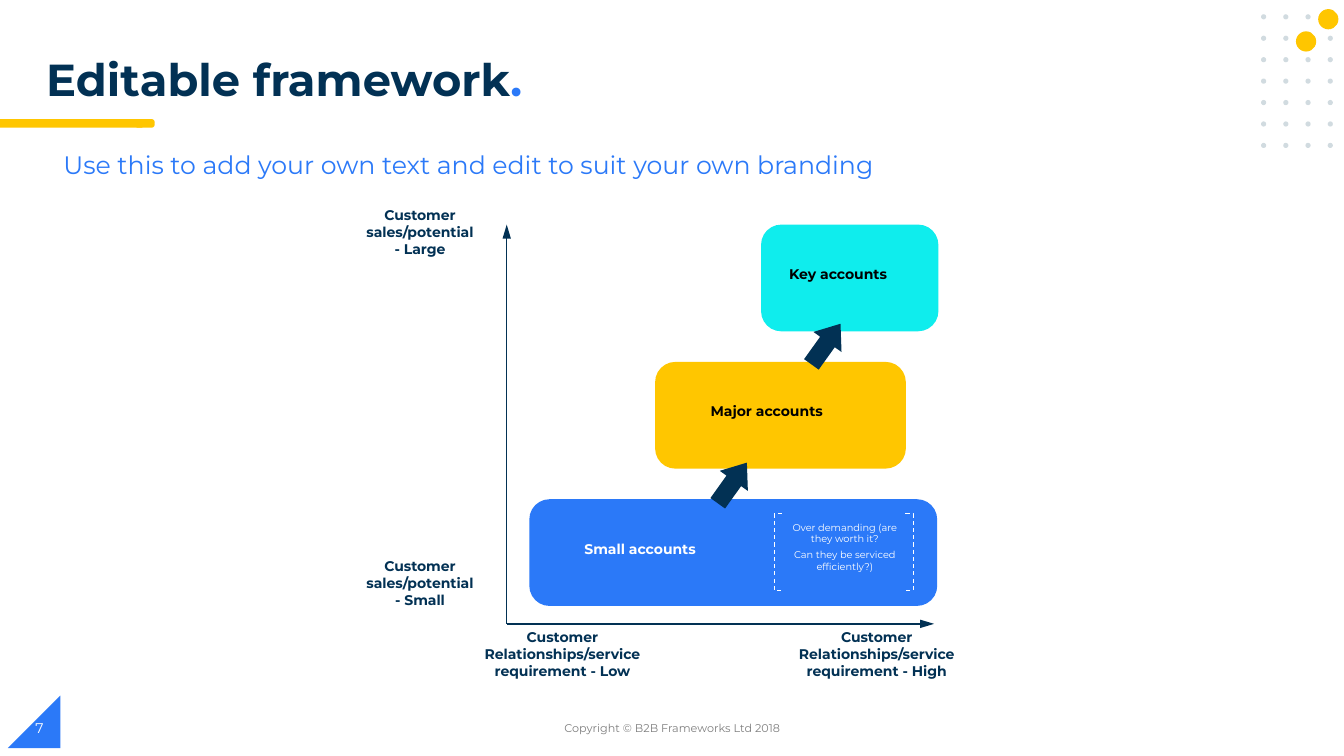
from lxml.etree import SubElement
from pptx import Presentation
from pptx.dml.color import RGBColor
from pptx.enum.dml import MSO_LINE
from pptx.enum.shapes import MSO_CONNECTOR, MSO_SHAPE
from pptx.enum.text import MSO_ANCHOR, MSO_AUTO_SIZE, PP_ALIGN
from pptx.oxml.ns import qn
from pptx.util import Cm, Pt

NAVY = RGBColor(0x02, 0x31, 0x54)
BLUE = RGBColor(0x2B, 0x79, 0xF8)
GOLD = RGBColor(0xFF, 0xC6, 0x00)
CYAN = RGBColor(0x0F, 0xED, 0xED)
PALE = RGBColor(0xD1, 0xDB, 0xE0)
GREY = RGBColor(0x7F, 0x7F, 0x7F)
BLACK = RGBColor(0, 0, 0)
WHITE = RGBColor(0xFF, 0xFF, 0xFF)

TITLE_ONLY = 5
STANDARD_INSETS = (0.25, 0.13)
TIGHT_INSETS = (0, 0.03)


class FrameworkSlide:
    """Draws on one slide in one style; every length is in centimetres."""

    font_name = "Montserrat"

    def __init__(self, deck):
        self.slide = deck.slides.add_slide(deck.slide_layouts[TITLE_ONLY])
        self.shapes = self.slide.shapes

    def add_span(self, para, text, size, color, bold=False):
        span = para.add_run()
        span.text = text
        span.font.name = self.font_name
        span.font.size = Pt(size)
        span.font.bold = bold
        span.font.color.rgb = color

    def set_frame(self, frame, insets, anchor=MSO_ANCHOR.TOP):
        side, edge = insets
        frame.word_wrap = True
        frame.auto_size = MSO_AUTO_SIZE.NONE
        frame.vertical_anchor = anchor
        frame.margin_left = frame.margin_right = Cm(side)
        frame.margin_top = Cm(edge)
        frame.margin_bottom = Cm(edge if side else 0)

    def title(self, left, top, width, height, spans):
        box = self.shapes.title
        box.left, box.top = Cm(left), Cm(top)
        box.width, box.height = Cm(width), Cm(height)
        self.set_frame(box.text_frame, STANDARD_INSETS)
        para = box.text_frame.paragraphs[0]
        para.alignment = PP_ALIGN.LEFT
        para.line_spacing = 0.9
        for text, color in spans:
            self.add_span(para, text, 32, color, bold=True)

    def text(self, left, top, width, height, lines, size, color, bold=False,
             align=PP_ALIGN.LEFT, insets=TIGHT_INSETS,
             anchor=MSO_ANCHOR.TOP, gap=0):
        box = self.shapes.add_textbox(Cm(left), Cm(top), Cm(width), Cm(height))
        frame = box.text_frame
        self.set_frame(frame, insets, anchor)
        for index, line in enumerate(lines):
            para = frame.add_paragraph() if index else frame.paragraphs[0]
            para.alignment = align
            if index:
                para.space_before = Pt(gap)
            self.add_span(para, line, size, color, bold)

    def shape(self, kind, left, top, width, height, color, rotation=0, adjust=()):
        shape = self.shapes.add_shape(
            kind, Cm(left), Cm(top), Cm(width), Cm(height))
        shape.shadow.inherit = False
        shape.fill.solid()
        shape.fill.fore_color.rgb = color
        shape.line.fill.background()
        shape.rotation = rotation
        for index, value in enumerate(adjust):
            shape.adjustments[index] = value

    def axis(self, start, end):
        line = self.shapes.add_connector(
            MSO_CONNECTOR.STRAIGHT, *(Cm(value) for value in start + end))
        line.line.color.rgb = NAVY
        line.line.width = Pt(1)
        SubElement(line.line._get_or_add_ln(), qn("a:tailEnd"),
                   type="triangle", w="med", len="lg")
        SubElement(line._element.spPr, qn("a:effectLst"))

    def bracket(self, spine, tip, top, bottom):
        builder = self.shapes.build_freeform(Cm(tip), Cm(top))
        corners = [(spine, top), (spine, bottom), (tip, bottom)]
        builder.add_line_segments([(Cm(x), Cm(y)) for x, y in corners], close=False)
        shape = builder.convert_to_shape()
        shape.shadow.inherit = False
        shape.fill.background()
        shape.line.color.rgb = WHITE
        shape.line.width = Pt(0.75)
        shape.line.dash_style = MSO_LINE.DASH


def draw_decoration(page):
    page.shape(MSO_SHAPE.RIGHT_TRIANGLE, 0.2, 17.53, 1.32, 1.32, BLUE, rotation=270)
    for top in (3, 3.06):
        page.shape(MSO_SHAPE.FLOWCHART_TERMINATOR, 3.4, top, 0.5, 0.16, GOLD)
        page.shape(MSO_SHAPE.RECTANGLE, 0, top, 3.59, 0.16, GOLD)
    for row in range(7):
        for column in range(4):
            page.shape(MSO_SHAPE.OVAL, 31.78 + 0.56 * column,
                       0.36 + 0.54 * row, 0.13, 0.13, PALE)
    for left, top in ((33.22, 0.23), (32.66, 0.79)):
        page.shape(MSO_SHAPE.OVAL, left, top, 0.51, 0.51, GOLD)


def draw_axes(page):
    origin = (12.77, 15.72)
    page.axis(origin, (12.77, 5.66))
    page.axis(origin, (23.54, 15.72))
    sales = "Customer sales/potential"
    service = "Customer Relationships/service requirement - "
    labels = [
        (8.97, 5.18, 3.23, [sales, "- Large"]),
        (8.97, 14.02, 3.23, [sales, "- Small"]),
        (11.84, 15.82, 4.67, [service + "Low"]),
        (19.76, 15.82, 4.67, [service + "High"]),
    ]
    for left, top, width, lines in labels:
        page.text(left, top, width, 1.3, lines, 10, NAVY, bold=True,
                  align=PP_ALIGN.CENTER)


def draw_accounts(page):
    accounts = [
        ("Key accounts", 19.18, 4.47, CYAN, 19.89, BLACK),
        ("Major accounts", 16.51, 6.32, GOLD, 17.91, BLACK),
        ("Small accounts", 13.34, 10.28, BLUE, 14.73, WHITE),
    ]
    for row, (name, left, width, fill, name_left, color) in enumerate(accounts):
        top = 5.66 + 3.46 * row
        page.shape(MSO_SHAPE.ROUNDED_RECTANGLE, left, top, width, 2.69, fill,
                   adjust=(0.19,))
        page.text(name_left, top + 1, 3.4, 0.46, [name], 10, color, bold=True)

    page.text(19.74, 13.11, 3.1, 1.32,
              ["Over demanding (are they worth it?",
               "Can they be serviced efﬁciently?)"],
              7, WHITE, align=PP_ALIGN.CENTER, gap=3)
    for spine, tip in ((19.51, 19.7), (23.01, 22.82)):
        page.bracket(spine, tip, 12.95, 14.87)
    for left, top in ((18.02, 11.54), (20.38, 8.04)):
        page.shape(MSO_SHAPE.UP_ARROW, left, top, 0.87, 1.26, NAVY,
                   rotation=35.6, adjust=(0.52, 0.65))


def main():
    deck = Presentation()
    deck.slide_width, deck.slide_height = Cm(33.87), Cm(19.05)
    page = FrameworkSlide(deck)
    draw_decoration(page)
    page.title(0.91, 1.32, 14.33, 1.52,
               [("Editable framework", NAVY), (".", BLUE)])
    page.text(1.35, 3.63, 21.82, 1.22,
              ["Use this to add your own text and edit to suit your own branding"],
              18, BLUE, insets=STANDARD_INSETS)
    draw_axes(page)
    draw_accounts(page)
    page.text(11.23, 17.83, 11.43, 1.02, ["Copyright © B2B Frameworks Ltd 2018"],
              8, GREY, align=PP_ALIGN.CENTER, insets=STANDARD_INSETS,
              anchor=MSO_ANCHOR.MIDDLE)
    page.text(0.64, 17.83, 7.62, 1.02, ["7"], 10, WHITE,
              insets=STANDARD_INSETS, anchor=MSO_ANCHOR.MIDDLE)
    deck.save("out.pptx")


if __name__ == "__main__":
    main()
